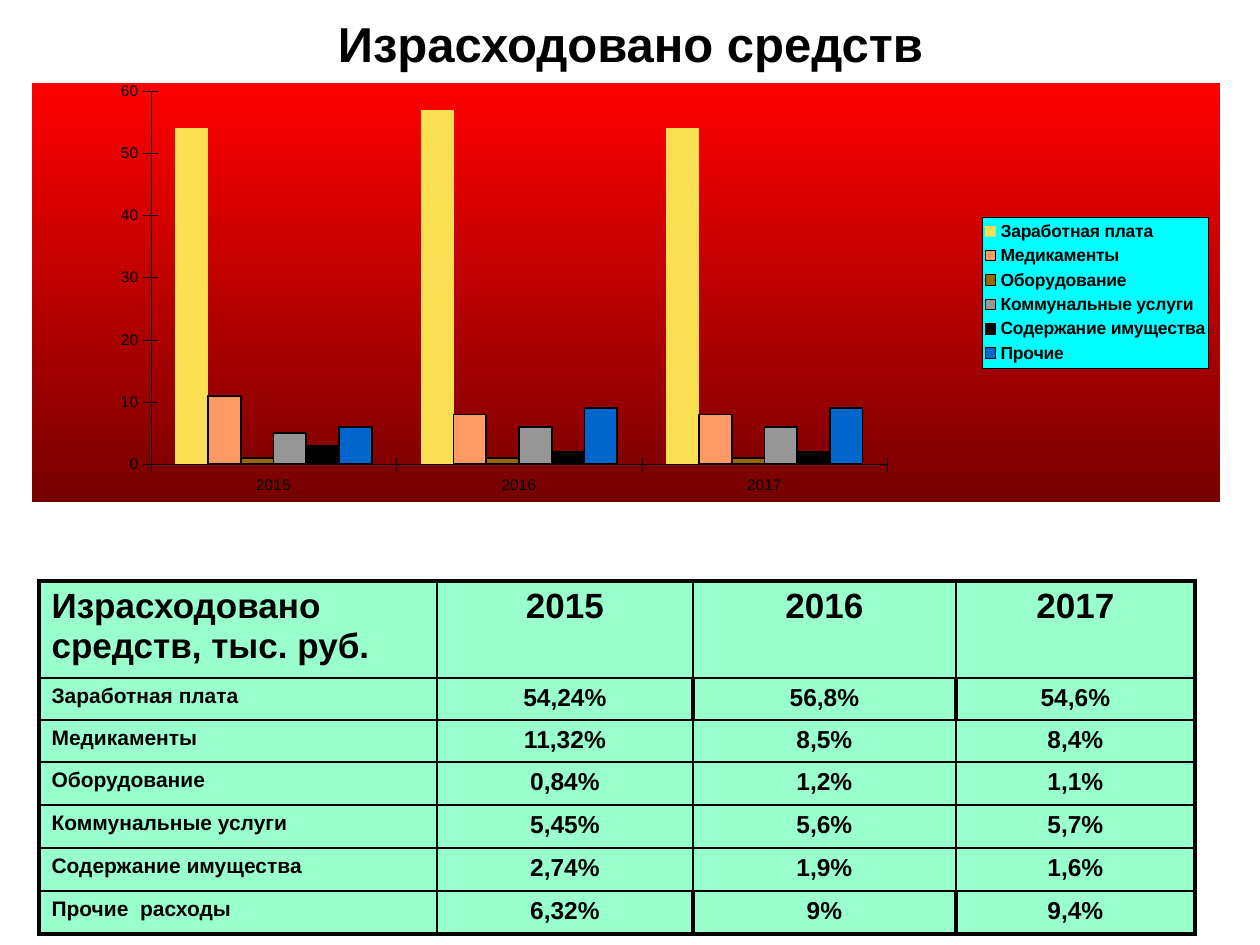
from lxml.etree import SubElement
from pptx import Presentation
from pptx.chart.data import CategoryChartData
from pptx.dml.color import RGBColor
from pptx.enum.chart import XL_CHART_TYPE as ChartType, XL_LEGEND_POSITION as LegendPosition
from pptx.enum.chart import XL_TICK_LABEL_POSITION as LabelPosition, XL_TICK_MARK as TickMark
from pptx.enum.text import MSO_ANCHOR as Anchor, PP_ALIGN as Align
from pptx.oxml import parse_xml
from pptx.oxml.ns import nsdecls, qn
from pptx.util import Pt

EMU_PER_PX = 914400 / 126
FONT = "Arial"
COLORS = {
    "ink": "000000", "cell": "99FFCC", "legend": "00FFFF",
    "chart_top": "FF0000", "chart_bottom": "760000",
    "salary": "FBDF53", "medicine": "FF9966", "equipment": "996600",
    "utilities": "969696", "upkeep": "000000", "other": "0066CC",
}
YEARS = ["2015", "2016", "2017"]
SPENDING = [
    ("Заработная плата", (54, 57, 54), "salary"),
    ("Медикаменты", (11, 8, 8), "medicine"),
    ("Оборудование", (1, 1, 1), "equipment"),
    ("Коммунальные услуги", (5, 6, 6), "utilities"),
    ("Содержание имущества", (3, 2, 2), "upkeep"),
    ("Прочие", (6, 9, 9), "other"),
]
TABLE_ROWS = [
    ["Израсходовано средств, тыс. руб.", *YEARS],
    ["Заработная плата", "54,24%", "56,8%", "54,6%"],
    ["Медикаменты", "11,32%", "8,5%", "8,4%"],
    ["Оборудование", "0,84%", "1,2%", "1,1%"],
    ["Коммунальные услуги", "5,45%", "5,6%", "5,7%"],
    ["Содержание имущества", "2,74%", "1,9%", "1,6%"],
    ["Прочие  расходы", "6,32%", "9%", "9,4%"],
]
COLUMN_WIDTHS = [398, 256, 263, 239]
ROW_HEIGHTS = [97, 42, 42, 43, 43, 43, 43]
THIN, THICK = 1, 2.25


def px(length):
    return round(length * EMU_PER_PX)


def rgb(name):
    return RGBColor.from_string(COLORS[name])


def style_font(font, size, bold=False):
    font.name, font.size, font.bold = FONT, Pt(size), bold
    font.color.rgb = rgb("ink")


def write_text(frame, text, size, align=Align.LEFT, before=0):
    paragraph = frame.paragraphs[0]
    paragraph.alignment = align
    run = paragraph.add_run()
    run.text = text
    style_font(run.font, size, bold=True)
    if before:
        spacing = SubElement(paragraph._p.get_or_add_pPr(), qn("a:spcBef"))
        SubElement(spacing, qn("a:spcPct"), val=str(before * 1000))


def add_title(slide, text):
    title = slide.shapes.add_textbox(px(95), 0, px(1071), px(86))
    title.text_frame.word_wrap = True
    title.text_frame.vertical_anchor = Anchor.MIDDLE
    write_text(title.text_frame, text, 28, align=Align.CENTER)


def place_part(part, position, x, y, w, h, inner=False):
    for old in part.findall(qn("c:layout")):
        part.remove(old)
    target = '<c:layoutTarget val="inner"/>' if inner else ""
    part.insert(position, parse_xml(
        f'<c:layout {nsdecls("c")}><c:manualLayout>{target}'
        '<c:xMode val="edge"/><c:yMode val="edge"/>'
        f'<c:x val="{x}"/><c:y val="{y}"/><c:w val="{w}"/><c:h val="{h}"/>'
        '</c:manualLayout></c:layout>'))


def paint_part(part, fill_xml, line_xml):
    part.find(qn("c:txPr")).addprevious(parse_xml(
        f'<c:spPr {nsdecls("c", "a")}>{fill_xml}{line_xml}</c:spPr>'))


def solid(name):
    return f'<a:solidFill><a:srgbClr val="{COLORS[name]}"/></a:solidFill>'


def style_axis(axis):
    axis.has_major_gridlines = False
    axis.major_tick_mark = TickMark.CROSS
    axis.format.line.color.rgb = rgb("ink")
    axis.format.line.width = Pt(0.23)
    style_font(axis.tick_labels.font, 8.8)


def style_legend(chart):
    chart.has_legend = True
    legend = chart.legend
    legend.position = LegendPosition.RIGHT
    legend.include_in_layout = False
    style_font(legend.font, 10, bold=True)
    place_part(legend._element, 1, 0.8, 0.32, 0.19, 0.36)
    paint_part(legend._element, solid("legend"), f'<a:ln w="2900">{solid("ink")}</a:ln>')


def add_spending_chart(slide):
    spending = CategoryChartData()
    spending.categories = YEARS
    for name, values, _ in SPENDING:
        spending.add_series(name, values)
    chart = slide.shapes.add_chart(
        ChartType.COLUMN_CLUSTERED, px(32), px(82), px(1188), px(420), spending).chart
    chart.has_title = False
    style_font(chart.font, 9.1)
    stops = "".join(
        f'<a:gs pos="{pos}"><a:srgbClr val="{COLORS[name]}"/></a:gs>'
        for pos, name in ((0, "chart_top"), (100000, "chart_bottom")))
    paint_part(chart._chartSpace,
               f'<a:gradFill><a:gsLst>{stops}</a:gsLst><a:lin ang="5400000" scaled="0"/></a:gradFill>',
               '<a:ln><a:noFill/></a:ln>')
    place_part(chart._chartSpace.chart.plotArea, 0, 0.1, 0.02, 0.62, 0.89, inner=True)

    style_axis(chart.category_axis)
    chart.category_axis.tick_label_position = LabelPosition.LOW
    style_axis(chart.value_axis)
    chart.value_axis.minimum_scale, chart.value_axis.maximum_scale = 0, 60
    chart.value_axis.major_unit = 10

    plot = chart.plots[0]
    plot.vary_by_categories = False
    plot.gap_width, plot.overlap = 150, 0
    for series, (_, _, color) in zip(plot.series, SPENDING):
        series.invert_if_negative = False
        series.format.fill.solid()
        series.format.fill.fore_color.rgb = rgb(color)
        if color == "salary":
            series.format.line.fill.background()
        else:
            series.format.line.color.rgb = rgb("ink")
            series.format.line.width = Pt(0.91)
    style_legend(chart)


def set_borders(cell, **widths):
    properties = cell._tc.get_or_add_tcPr()
    for side in "LRTB":
        properties.append(parse_xml(
            f'<a:ln{side} {nsdecls("a")} w="{Pt(widths[side])}">{solid("ink")}</a:ln{side}>'))


def add_spending_table(slide):
    table = slide.shapes.add_table(
        len(ROW_HEIGHTS), len(COLUMN_WIDTHS), px(39), px(581),
        px(sum(COLUMN_WIDTHS)), px(sum(ROW_HEIGHTS))).table
    table.first_row = table.horz_banding = False
    for column, width in zip(table.columns, COLUMN_WIDTHS):
        column.width = px(width)
    for row, height in zip(table.rows, ROW_HEIGHTS):
        row.height = px(height)
    last_row, last_column = len(ROW_HEIGHTS) - 1, len(COLUMN_WIDTHS) - 1
    for r, texts in enumerate(TABLE_ROWS):
        for c, text in enumerate(texts):
            cell = table.cell(r, c)
            size = 20 if r == 0 else 12 if c == 0 else 14
            align = Align.LEFT if c == 0 else Align.CENTER
            write_text(cell.text_frame, text, size, align=align, before=20)
            heavy = r in (1, last_row)
            set_borders(
                cell,
                L=THICK if c == 0 or (heavy and c > 1) else THIN,
                R=THICK if c == last_column or (heavy and c > 0) else THIN,
                T=THICK if r == 0 else THIN,
                B=THICK if r == last_row else THIN)
            cell.fill.solid()
            cell.fill.fore_color.rgb = rgb("cell")


def main():
    """Build the slide on spending by year and save it."""
    deck = Presentation()
    deck.slide_width, deck.slide_height = px(1260), px(945)
    slide = deck.slides.add_slide(deck.slide_layouts[6])
    add_title(slide, "Израсходовано средств")
    add_spending_chart(slide)
    add_spending_table(slide)
    deck.save("out.pptx")


if __name__ == "__main__":
    main()
